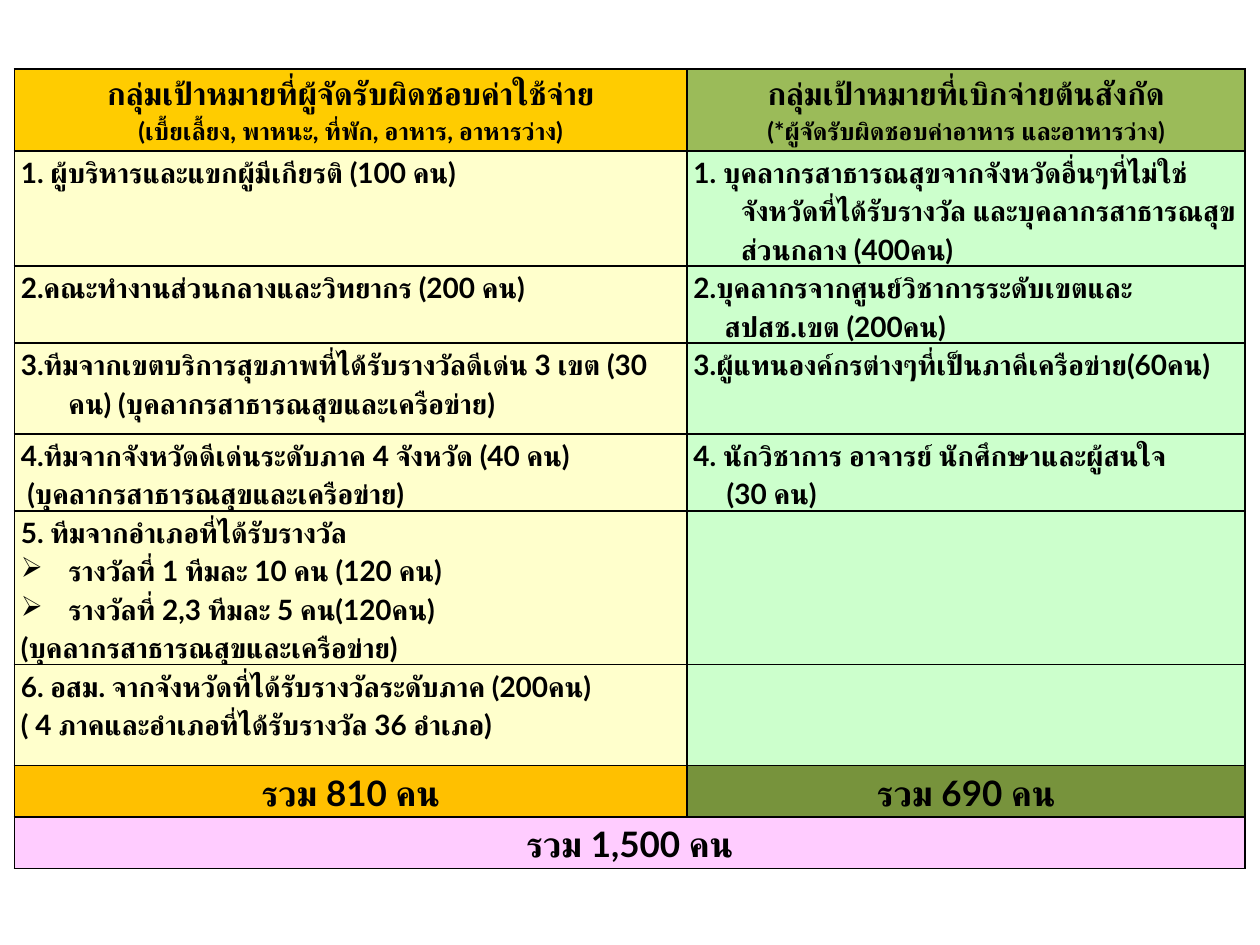
from lxml import etree
from pptx import Presentation
from pptx import util as u
from pptx.dml.color import RGBColor
from pptx.enum import lang, text
from pptx.oxml import ns

FONT = "Lato"
BLACK = RGBColor(0x00, 0x00, 0x00)
GOLD = RGBColor(0xFF, 0xCC, 0x00)
OLIVE = RGBColor(0x9B, 0xBB, 0x59)
CREAM = RGBColor(0xFF, 0xFF, 0xCC)
MINT = RGBColor(0xCC, 0xFF, 0xCC)
AMBER = RGBColor(0xFF, 0xC0, 0x00)
MOSS = RGBColor(0x77, 0x93, 0x3C)
PINK = RGBColor(0xFF, 0xCC, 0xFF)

HANG = 0.96
BULLET = "➢"
COL_WIDTHS = (13.56, 11.25)
ROW_HEIGHTS = (1.65, 1.85, 1.22, 1.83, 1.4, 2.57, 2.03, 1.04, 1.04)

HEADERS = (
    ("กลุ่มเป้าหมายที่ผู้จัดรับผิดชอบค่าใช้จ่าย", "(เบี้ยเลี้ยง, พาหนะ, ที่พัก, อาหาร, อาหารว่าง)", GOLD),
    ("กลุ่มเป้าหมายที่เบิกจ่ายต้นสังกัด", "(*ผู้จัดรับผิดชอบค่าอาหาร และอาหารว่าง)", OLIVE),
)
GROUPS = (
    (["1. ผู้บริหารและแขกผู้มีเกียรติ (100 คน)"],
     ["1. บุคลากรสาธารณสุขจากจังหวัดอื่นๆที่ไม่ใช่จังหวัดที่ได้รับรางวัล "
      "และบุคลากรสาธารณสุขส่วนกลาง (400คน)"]),
    (["2.คณะทำงานส่วนกลางและวิทยากร (200 คน)"],
     ["2.บุคลากรจากศูนย์วิชาการระดับเขตและ", ("สปสช.เขต (200คน)", 0.63)]),
    (["3.ทีมจากเขตบริการสุขภาพที่ได้รับรางวัลดีเด่น 3 เขต (30 คน) (บุคลากรสาธารณสุขและเครือข่าย)"],
     ["3.ผู้แทนองค์กรต่างๆที่เป็นภาคีเครือข่าย(60คน)"]),
    (["4.ทีมจากจังหวัดดีเด่นระดับภาค 4 จังหวัด (40 คน)",
      ("(บุคลากรสาธารณสุขและเครือข่าย)", 0.13)],
     ["4. นักวิชาการ อาจารย์ นักศึกษาและผู้สนใจ", ("(30 คน)", 0.67)]),
    (["5. ทีมจากอำเภอที่ได้รับรางวัล",
      BULLET + "รางวัลที่ 1 ทีมละ 10 คน (120 คน)",
      BULLET + "รางวัลที่ 2,3 ทีมละ 5 คน(120คน)",
      "(บุคลากรสาธารณสุขและเครือข่าย)"], []),
    ([("6. อสม. จากจังหวัดที่ได้รับรางวัลระดับภาค (200คน)", 0),
      ("( 4 ภาคและอำเภอที่ได้รับรางวัล 36 อำเภอ)", 0)], []),
)
TOTALS = (("รวม 810 คน", AMBER), ("รวม 690 คน", MOSS))
GRAND_TOTAL = "รวม 1,500 คน"


def add_borders(cell):
    tcPr = cell._tc.get_or_add_tcPr()
    for i, side in enumerate(("lnL", "lnR", "lnT", "lnB")):
        ln = etree.Element(ns.qn("a:" + side), w=str(u.Pt(1)))
        fill = etree.SubElement(ln, ns.qn("a:solidFill"))
        etree.SubElement(fill, ns.qn("a:srgbClr"), val=str(BLACK))
        tcPr.insert(i, ln)


def style_cell(cell, color):
    cell.margin_left = cell.margin_right = u.Cm(0.13)
    cell.margin_top = cell.margin_bottom = 0
    cell.fill.solid()
    cell.fill.fore_color.rgb = color
    add_borders(cell)


def write_line(p, line, size, align=None, margin=0, indent=0):
    bulleted = line.startswith(BULLET)
    p.text = line.removeprefix(BULLET)
    p.alignment = align
    p.line_spacing = 1.15
    pPr = p._p.get_or_add_pPr()
    pPr.set("marL", str(u.Cm(margin)))
    pPr.set("indent", str(u.Cm(indent)))
    if bulleted:
        etree.SubElement(pPr, ns.qn("a:buChar"), char=BULLET)
    for r in p.runs:
        font = r.font
        font.name, font.size, font.bold = FONT, u.Pt(size), True
        font.color.rgb = BLACK
        font.language_id = lang.MSO_LANGUAGE_ID.THAI
        etree.SubElement(r._r.get_or_add_rPr(), ns.qn("a:cs"), typeface=FONT)


def next_paragraph(tf, i):
    return tf.add_paragraph() if i else tf.paragraphs[0]


def fill_centered(cell, lines, sizes, color):
    style_cell(cell, color)
    for i, (line, size) in enumerate(zip(lines, sizes)):
        write_line(next_paragraph(cell.text_frame, i), line, size, text.PP_ALIGN.CENTER)


def fill_group(cell, lines, color):
    style_cell(cell, color)
    for i, line in enumerate(lines):
        p = next_paragraph(cell.text_frame, i)
        if isinstance(line, tuple):
            write_line(p, line[0], 16, margin=line[1])
        else:
            write_line(p, line, 16, margin=HANG, indent=-HANG)


def add_target_table(s, left, top, widths, heights):
    frame = s.shapes.add_table(len(heights), len(widths), u.Cm(left), u.Cm(top),
                               u.Cm(sum(widths)), u.Cm(sum(heights)))
    table = frame.table
    table.first_row = table.horz_banding = False
    for col, width in zip(table.columns, widths):
        col.width = u.Cm(width)
    for row, height in zip(table.rows, heights):
        row.height = u.Cm(height)

    last = len(heights) - 1
    for c, (title, note, color) in enumerate(HEADERS):
        fill_centered(table.cell(0, c), (title, note), (18, 14), color)
    for r, group in enumerate(GROUPS, 1):
        for c, color in enumerate((CREAM, MINT)):
            fill_group(table.cell(r, c), group[c], color)
    for c, (total, color) in enumerate(TOTALS):
        fill_centered(table.cell(last - 1, c), (total,), (20,), color)
    table.cell(last, 0).merge(table.cell(last, 1))
    fill_centered(table.cell(last, 0), (GRAND_TOTAL,), (20,), PINK)
    style_cell(table.cell(last, 1), PINK)


def main():
    prs = Presentation()
    prs.slide_width, prs.slide_height = u.Cm(25.4), u.Cm(19.05)
    s = prs.slides.add_slide(prs.slide_layouts[6])
    add_target_table(s, 0.29, 1.39, COL_WIDTHS, ROW_HEIGHTS)
    prs.save("out.pptx")


if __name__ == "__main__":
    main()
